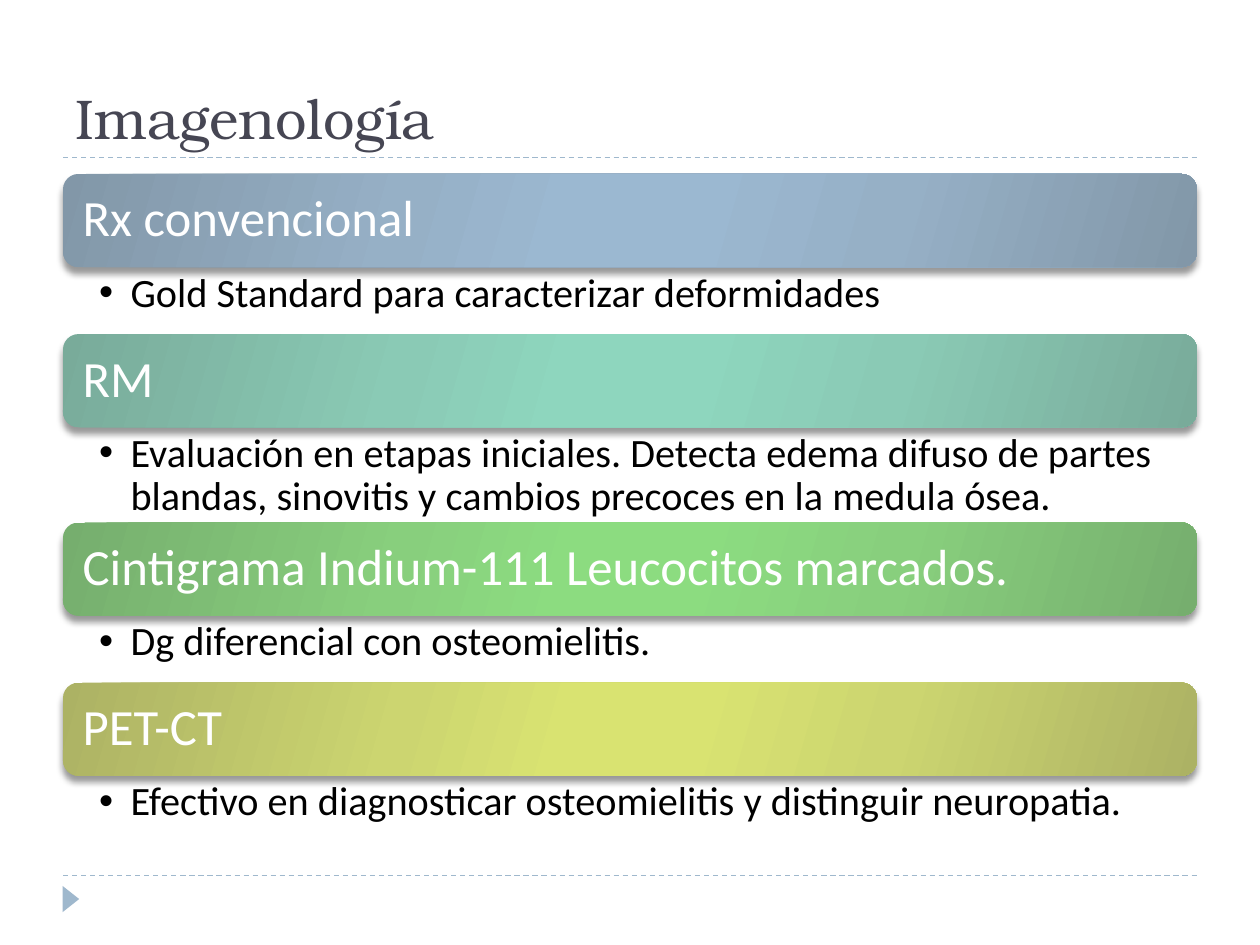
import pptx
import pptx.util
import pptx.dml.color
import pptx.enum.dml
import pptx.enum.shapes
import pptx.enum.text
import pptx.oxml
import pptx.oxml.ns
from lxml import etree

Pt = pptx.util.Pt
qn = pptx.oxml.ns.qn
MSO_SHAPE = pptx.enum.shapes.MSO_SHAPE
MSO_ANCHOR = pptx.enum.text.MSO_ANCHOR
PP_ALIGN = pptx.enum.text.PP_ALIGN

COLORS = {
    "title": "464653",
    "accent": "9FB8CD",
    "heading": "FFFFFF",
    "detail": "000000",
    "shadow": "000000",
}
GRADIENT_POSITIONS = (0, 30, 45, 55, 73, 100)
LEFT, WIDTH = 36, 648
BAR_H = 53.3
LINE_DETAIL_H, TWO_LINE_DETAIL_H = 38.2, 54.4

SECTIONS = [
    ("Rx convencional", "Gold Standard para caracterizar deformidades",
     LINE_DETAIL_H, ("8297A8", "96B0C6", "9BB8D1")),
    ("RM", "Evaluación en etapas iniciales. Detecta edema difuso de partes "
     "blandas, sinovitis y cambios precoces en la medula ósea.",
     TWO_LINE_DETAIL_H, ("79AB9A", "8ACAB5", "8ED6BE")),
    ("Cintigrama Indium-111 Leucocitos marcados.",
     "Dg diferencial con osteomielitis.",
     LINE_DETAIL_H, ("76AE6E", "88CF7D", "8CDC80")),
    ("PET-CT", "Efectivo en diagnosticar osteomielitis y distinguir neuropatia.",
     LINE_DETAIL_H, ("ACB264", "CCD570", "D9E371")),
]


def rgb(name):
    return pptx.dml.color.RGBColor.from_string(COLORS[name])


def set_insets(tf, left, top, right, bottom):
    tf.margin_left, tf.margin_top = Pt(left), Pt(top)
    tf.margin_right, tf.margin_bottom = Pt(right), Pt(bottom)


def add_run(p, text, size, font, color):
    p.alignment = PP_ALIGN.LEFT
    r = p.add_run()
    r.text = text
    r.font.size = Pt(size)
    r.font.name = font
    r.font.color.rgb = rgb(color)


def set_gradient(sp, tones):
    edge, mid, centre = tones
    stops = zip(GRADIENT_POSITIONS, (edge, mid, centre, centre, mid, edge))
    gs = "".join(
        f'<a:gs pos="{pos * 1000}"><a:srgbClr val="{color}"/></a:gs>'
        for pos, color in stops)
    sp._element.spPr.insert(2, pptx.oxml.parse_xml(
        f'<a:gradFill {pptx.oxml.ns.nsdecls("a")} rotWithShape="1">'
        f'<a:gsLst>{gs}</a:gsLst><a:lin ang="960000" scaled="0"/></a:gradFill>'))


def set_shadow(sp):
    sp.shadow.inherit = False
    effects = sp._element.spPr.find(qn("a:effectLst"))
    shadow = etree.SubElement(
        effects, qn("a:outerShdw"), blurRad=str(Pt(4)), dist=str(Pt(3.4)),
        dir="5400000", rotWithShape="0")
    color = etree.SubElement(shadow, qn("a:srgbClr"), val=COLORS["shadow"])
    etree.SubElement(color, qn("a:alpha"), val="40000")


def add_title(s, x, y, w, h):
    sp = s.shapes.title
    sp.left, sp.top, sp.width, sp.height = Pt(x), Pt(y), Pt(w), Pt(h)
    tf = sp.text_frame
    tf.vertical_anchor = MSO_ANCHOR.BOTTOM
    add_run(tf.paragraphs[0], "Imagenología", 32, "TeX Gyre Bonum", "title")


def add_rule(s, x, y, w):
    line = s.shapes.add_connector(
        pptx.enum.shapes.MSO_CONNECTOR.STRAIGHT, Pt(x), Pt(y), Pt(x + w), Pt(y))
    line.line.color.rgb = rgb("accent")
    line.line.width = Pt(0.75)
    line.line.dash_style = pptx.enum.dml.MSO_LINE.DASH
    etree.SubElement(line._element.spPr, qn("a:effectLst"))


def add_marker(s, x, y, w, h):
    sp = s.shapes.add_shape(
        MSO_SHAPE.ISOSCELES_TRIANGLE, Pt(x), Pt(y), Pt(w), Pt(h))
    sp.rotation = 90
    sp.fill.solid()
    sp.fill.fore_color.rgb = rgb("accent")
    sp.line.fill.background()
    sp.shadow.inherit = False


def add_heading_bar(s, x, y, w, h, text, tones):
    sp = s.shapes.add_shape(
        MSO_SHAPE.ROUNDED_RECTANGLE, Pt(x), Pt(y), Pt(w), Pt(h))
    sp.line.fill.background()
    set_gradient(sp, tones)
    set_shadow(sp)
    tf = sp.text_frame
    tf.word_wrap = True
    tf.vertical_anchor = MSO_ANCHOR.MIDDLE
    set_insets(tf, 8.7, 8.7, 8.7, 8.7)
    p = tf.paragraphs[0]
    p.line_spacing = 0.9
    add_run(p, text, 29, "Calibri", "heading")


def add_detail(s, x, y, w, h, text):
    tf = s.shapes.add_textbox(Pt(x), Pt(y), Pt(w), Pt(h)).text_frame
    tf.word_wrap = True
    set_insets(tf, 20.6, 2.9, 16.3, 2.9)
    p = tf.paragraphs[0]
    p.level = 1
    p.line_spacing = 0.9
    p.space_after = Pt(4.6)
    add_run(p, text, 23, "Calibri", "detail")
    pPr = p._p.get_or_add_pPr()
    pPr.set("marL", str(Pt(18)))
    pPr.set("indent", str(Pt(-18)))
    etree.SubElement(pPr, qn("a:buFont"), typeface="Arial")
    etree.SubElement(pPr, qn("a:buChar"), char="•")


def add_sections(s, x, y, w):
    for heading, detail, detail_h, tones in SECTIONS:
        add_heading_bar(s, x, y, w, BAR_H, heading, tones)
        add_detail(s, x, y + BAR_H, w, detail_h, detail)
        y += BAR_H + detail_h


def main():
    prs = pptx.Presentation()
    prs.slide_width, prs.slide_height = Pt(720), Pt(540)
    s = prs.slides.add_slide(prs.slide_layouts[5])
    add_rule(s, LEFT, 500.4, WIDTH)
    add_rule(s, LEFT, 90, WIDTH)
    add_marker(s, 33, 509, 15, 9.5)
    add_title(s, LEFT, 12, WIDTH, 78)
    add_sections(s, LEFT, 99.4, WIDTH)
    prs.save("out.pptx")


if __name__ == "__main__":
    main()
